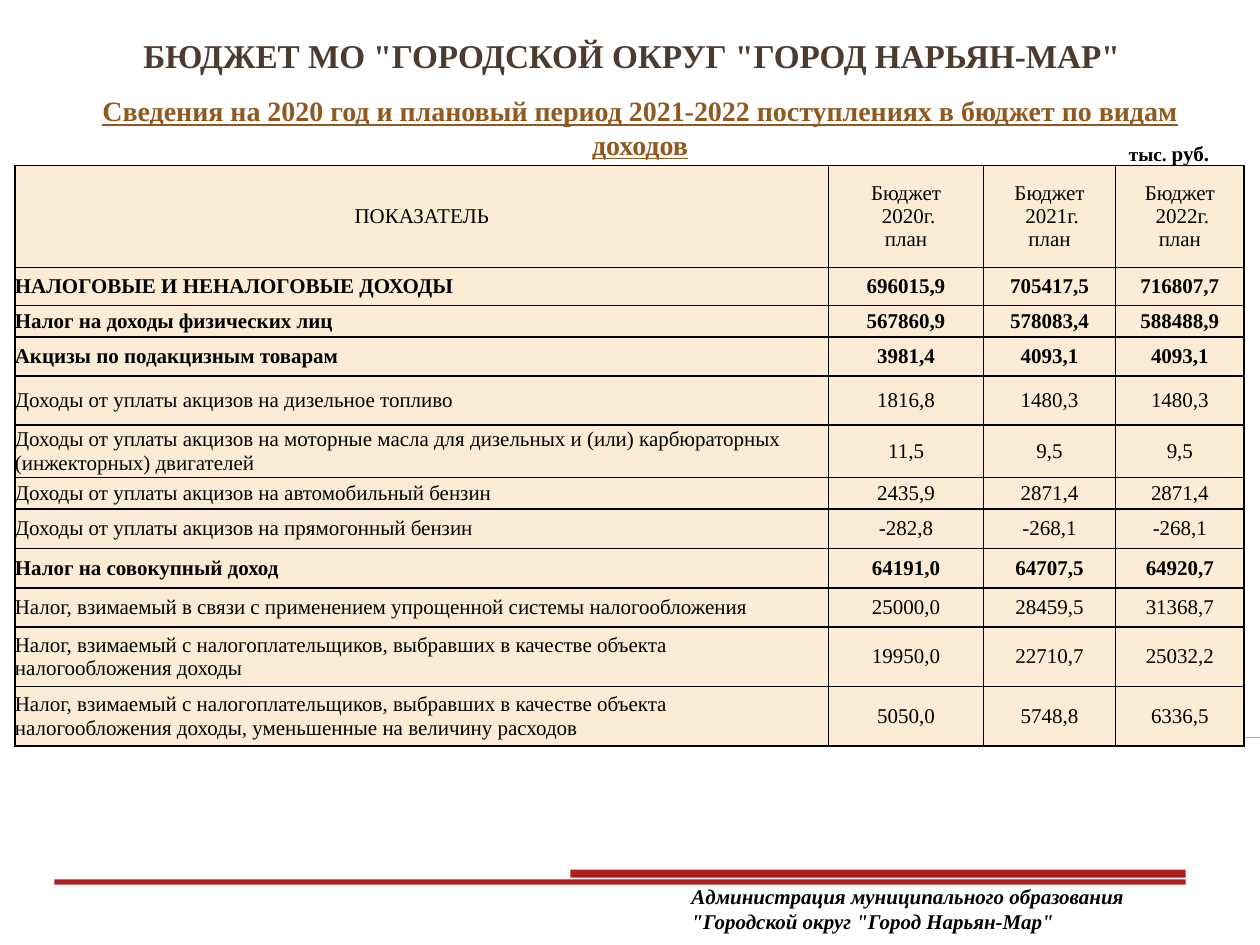
from lxml.etree import SubElement
from pptx import Presentation
from pptx.dml.color import RGBColor
from pptx.enum.shapes import MSO_CONNECTOR, MSO_SHAPE
from pptx.enum.text import MSO_ANCHOR, MSO_AUTO_SIZE, PP_ALIGN
from pptx.oxml.ns import qn
from pptx.util import Pt

# Content
TITLE = 'БЮДЖЕТ МО "ГОРОДСКОЙ ОКРУГ "ГОРОД НАРЬЯН-МАР"'
SUB = "Сведения на 2020 год и плановый период 2021-2022 поступлениях в бюджет по видам доходов"
UNIT = (("тыс. ", 11), ("руб.", 12))
OWNER = 'Администрация муниципального образования "Городской округ "Город Нарьян-Мар"'
HEAD = ["ПОКАЗАТЕЛЬ"] + [f"Бюджет\n {year}г.\nплан" for year in (2020, 2021, 2022)]
# Row height, bold, label, three yearly values
ROWS = [
    (21.5, True, "НАЛОГОВЫЕ И НЕНАЛОГОВЫЕ ДОХОДЫ", "696015,9", "705417,5", "716807,7"),
    (18, True, "Налог на доходы физических лиц", "567860,9", "578083,4", "588488,9"),
    (22.5, True, "Акцизы по подакцизным товарам", "3981,4", "4093,1", "4093,1"),
    (28, False, "Доходы от уплаты акцизов на дизельное топливо", "1816,8", "1480,3", "1480,3"),
    (30, False, "Доходы от уплаты акцизов на моторные масла для дизельных и (или) "
     "карбюраторных (инжекторных) двигателей", "11,5", "9,5", "9,5"),
    (18, False, "Доходы от уплаты акцизов на автомобильный бензин", "2435,9", "2871,4", "2871,4"),
    (22.5, False, "Доходы от уплаты акцизов на прямогонный бензин", "-282,8", "-268,1", "-268,1"),
    (22.5, True, "Налог на совокупный доход", "64191,0", "64707,5", "64920,7"),
    (22.5, False, "Налог, взимаемый в связи с применением упрощенной системы налогообложения",
     "25000,0", "28459,5", "31368,7"),
    (34, False, "Налог, взимаемый с налогоплательщиков, выбравших в качестве объекта "
     "налогообложения доходы", "19950,0", "22710,7", "25032,2"),
    (34, False, "Налог, взимаемый с налогоплательщиков, выбравших в качестве объекта "
     "налогообложения доходы, уменьшенные на величину расходов", "5050,0", "5748,8", "6336,5"),
]
WIDTHS = (465, 88.5, 75.5, 73.5)
HEAD_H = 58.5
BARS = [(326, 497, 351.5, 4.5), (31, 502.5, 646.5, 3)]
COLORS = {"title": "4E3B30", "sub": "91581F", "ink": "000000",
          "cell": "FCECD5", "bar": "AD1F1F", "rule": "F0A22E"}
FONT = "Times New Roman"


def color(name):
    return RGBColor.from_string(COLORS[name])


def write(frame, text, size=12, ink="ink", bold=False, italic=False, under=False,
          align=PP_ALIGN.LEFT):
    """Fill a frame with a string, or with (text, size) runs on one line."""
    lines = ([[(line, size)] for line in text.split("\n")]
             if isinstance(text, str) else [text])
    for i, line in enumerate(lines):
        para = frame.add_paragraph() if i else frame.paragraphs[0]
        para.alignment = align
        for part, points in line:
            run = para.add_run()
            run.text = part
            font = run.font
            font.name, font.size = FONT, Pt(points)
            font.bold, font.italic, font.underline = bold, italic, under
            font.color.rgb = color(ink)


def add_box(slide, box, text, anchor=MSO_ANCHOR.TOP, **style):
    frame = slide.shapes.add_textbox(*map(Pt, box)).text_frame
    frame.word_wrap = True
    frame.vertical_anchor = anchor
    write(frame, text, **style)


def add_edges(cell):
    props = cell._tc.get_or_add_tcPr()
    for i, side in enumerate(("lnL", "lnR", "lnT", "lnB")):
        line = props.makeelement(qn(f"a:{side}"), {"w": str(Pt(1))})
        fill = SubElement(line, qn("a:solidFill"))
        SubElement(fill, qn("a:srgbClr"), val=COLORS["ink"])
        props.insert(i, line)


def add_grid(slide):
    heights = [HEAD_H] + [row[0] for row in ROWS]
    frame = slide.shapes.add_table(len(heights), len(WIDTHS), Pt(8.5), Pt(94.5),
                                   Pt(sum(WIDTHS)), Pt(sum(heights)))
    table = frame.table
    for col, width in zip(table.columns, WIDTHS):
        col.width = Pt(width)
    for row, height in zip(table.rows, heights):
        row.height = Pt(height)
    lines = [(False, *HEAD)] + [row[1:] for row in ROWS]
    for r, (bold, *texts) in enumerate(lines):
        for c, text in enumerate(texts):
            cell = table.cell(r, c)
            cell.fill.solid()
            cell.fill.fore_color.rgb = color("cell")
            cell.vertical_anchor = MSO_ANCHOR.MIDDLE
            if r or c:
                cell.margin_left = cell.margin_right = 0
            if r:
                cell.margin_top = cell.margin_bottom = 0
            left = r > 0 and c == 0
            write(cell.text_frame, text, bold=bold,
                  align=PP_ALIGN.LEFT if left else PP_ALIGN.CENTER)
            add_edges(cell)


def main():
    deck = Presentation()
    deck.slide_width, deck.slide_height = Pt(720), Pt(540)
    slide = deck.slides.add_slide(deck.slide_layouts[5])

    # Thin rule behind the table
    rule = slide.shapes.add_connector(MSO_CONNECTOR.STRAIGHT, Pt(40), Pt(421.5),
                                      Pt(720), Pt(421.5))
    rule.line.color.rgb = color("rule")
    rule.line.width = Pt(0.75)
    SubElement(rule._element.spPr, qn("a:effectLst"))

    # Title and subtitle
    title = slide.shapes.title
    title.left, title.top, title.width, title.height = map(Pt, (28, 16.5, 666, 96.5))
    title.text_frame.auto_size = MSO_AUTO_SIZE.NONE
    title.text_frame.vertical_anchor = MSO_ANCHOR.TOP
    write(title.text_frame, TITLE, size=19, ink="title", bold=True, align=PP_ALIGN.CENTER)
    add_box(slide, (39.5, 56, 652.5, 39.5), SUB, anchor=MSO_ANCHOR.BOTTOM, size=16,
            ink="sub", bold=True, under=True, align=PP_ALIGN.CENTER)

    add_grid(slide)

    # Footer bars
    for box in BARS:
        bar = slide.shapes.add_shape(MSO_SHAPE.RECTANGLE, *map(Pt, box))
        bar.shadow.inherit = False
        bar.fill.solid()
        bar.fill.fore_color.rgb = color("bar")
        bar.line.fill.background()

    # Unit and footer text
    add_box(slide, (638, 77, 73.5, 21.5), UNIT, bold=True)
    add_box(slide, (388, 501.5, 278, 36), OWNER, bold=True, italic=True)
    deck.save("out.pptx")


if __name__ == "__main__":
    main()
